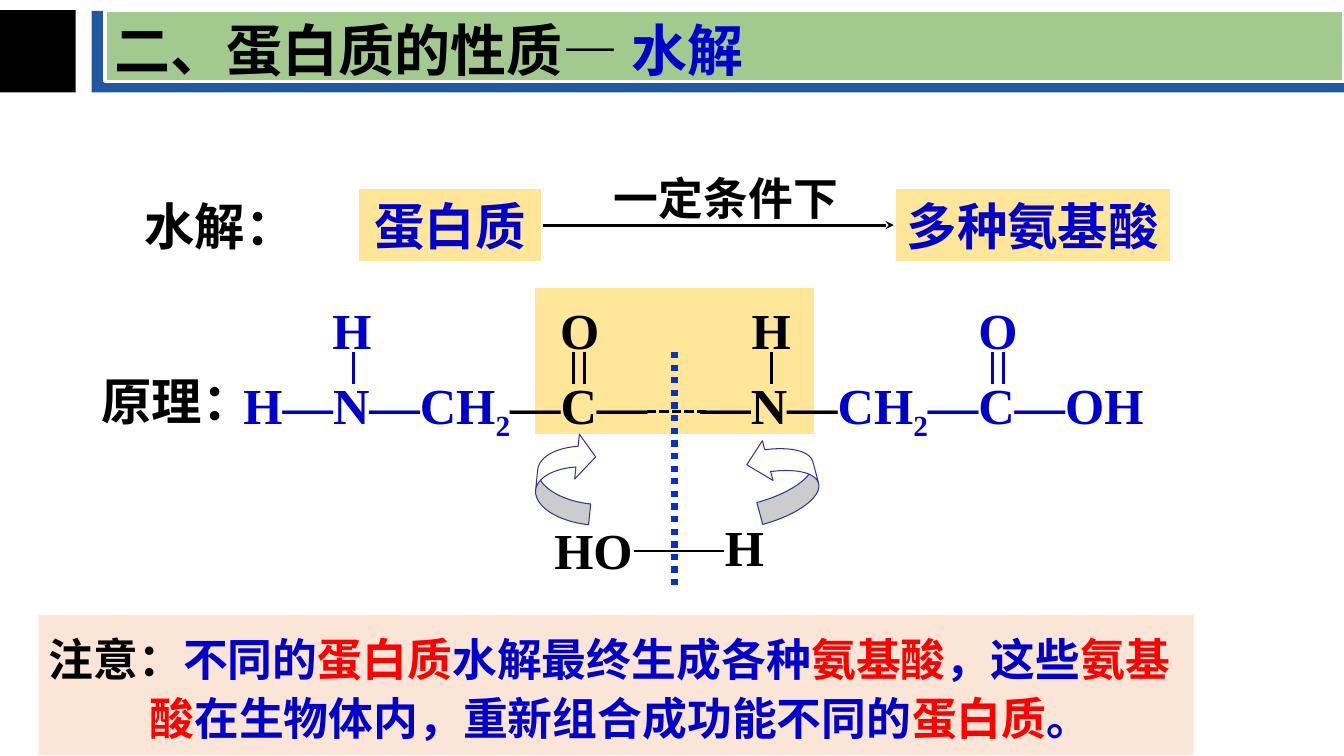
import pptx
import pptx.dml.color
import pptx.enum.dml
import pptx.enum.shapes
import pptx.enum.text
import pptx.oxml.ns
import pptx.util
from lxml import etree

RGBColor = pptx.dml.color.RGBColor
MSO_SHAPE = pptx.enum.shapes.MSO_SHAPE
DASH = pptx.enum.dml.MSO_LINE
ALIGN = pptx.enum.text.PP_ALIGN
ANCHOR = pptx.enum.text.MSO_ANCHOR

BLACK = RGBColor(0x00, 0x00, 0x00)
WHITE = RGBColor(0xFF, 0xFF, 0xFF)
BLUE = RGBColor(0x00, 0x00, 0xCC)
RED = RGBColor(0xFF, 0x00, 0x00)
YELLOW = RGBColor(0xFF, 0xE6, 0x99)
PEACH = RGBColor(0xFB, 0xE5, 0xD6)
GREEN = RGBColor(0xA9, 0xD1, 0x8E)
BANNER_BLUE = RGBColor(0x22, 0x58, 0xA2)
CUT_BLUE = RGBColor(0x00, 0x33, 0xCC)
ARROW_BLUE = RGBColor(0x33, 0x33, 0x99)

LATIN_FONT = "Times New Roman"
CHINESE_FONT = "Noto Sans CJK SC"

# The slide is a grid of 160 columns and 90 rows
SLIDE_WIDTH = pptx.util.Inches(13.33)
SLIDE_HEIGHT = pptx.util.Inches(7.5)
COLUMN = SLIDE_WIDTH / 160
ROW = SLIDE_HEIGHT / 90

ATOM_ROW = 35
CHAIN_ROW = 43.9
TEXT_ROWS = 8.5
BOND_ROWS = (41.9, 45.7)


def place(left, top, width, height):
    return (round(left * COLUMN), round(top * ROW),
            round(width * COLUMN), round(height * ROW))


def add_block(slide, preset, area, fill=None, line=None, weight=3):
    shape = slide.shapes.add_shape(preset, *place(*area))
    shape.shadow.inherit = False
    if fill is None:
        shape.fill.background()
    else:
        shape.fill.solid()
        shape.fill.fore_color.rgb = fill
    if line is None:
        shape.line.fill.background()
    else:
        shape.line.color.rgb = line
        shape.line.width = pptx.util.Pt(weight)
    return shape


def write_runs(shape, runs, size, wrap=True, align=ALIGN.LEFT,
               anchor=ANCHOR.MIDDLE):
    """Each run is (text, colour) or (text, colour, extra)."""
    frame = shape.text_frame
    frame.word_wrap = wrap
    frame.vertical_anchor = anchor
    paragraph = frame.paragraphs[0]
    paragraph.alignment = align
    for text, colour, *extra in runs:
        run = paragraph.add_run()
        run.text = text
        font_values = {"size": pptx.util.Pt(size), "bold": True,
                       "name": CHINESE_FONT if "chinese" in extra else LATIN_FONT}
        for name, value in font_values.items():
            setattr(run.font, name, value)
        run.font.color.rgb = colour
        properties = run.font._element
        east_asian = etree.SubElement(properties, pptx.oxml.ns.qn("a:ea"))
        east_asian.set("typeface", CHINESE_FONT)
        if "subscript" in extra:
            properties.set("baseline", "-25000")
    return paragraph


def add_label(slide, area, runs, size=36, wrap=True):
    shape = slide.shapes.add_textbox(*place(*area))
    write_runs(shape, runs, size, wrap, anchor=ANCHOR.TOP)


def add_line(slide, start, end, colour=BLACK, weight=2.25, dash=None):
    connector = slide.shapes.add_connector(
        pptx.enum.shapes.MSO_CONNECTOR.STRAIGHT,
        *place(*start, *end))
    connector.line.color.rgb = colour
    connector.line.width = pptx.util.Pt(weight)
    if dash is not None:
        connector.line.dash_style = dash
    etree.SubElement(connector._element.spPr, pptx.oxml.ns.qn("a:effectLst"))
    return connector


def add_bond(slide, columns, colour):
    for column in columns:
        add_line(slide, (column, BOND_ROWS[0]), (column, BOND_ROWS[1]), colour)


def add_curved_arrow(slide, preset, area, rotation, adjustments):
    shape = add_block(slide, preset, area, WHITE, ARROW_BLUE, 0.75)
    shape.rotation = rotation
    for index, value in enumerate(adjustments):
        shape.adjustments[index] = value


def add_banner(slide):
    rectangle = MSO_SHAPE.RECTANGLE
    add_block(slide, rectangle, (0, 1.2, 9, 9.8), BLACK)
    add_block(slide, rectangle, (10.9, 1.3, 149.1, 9.7), BANNER_BLUE)
    band = add_block(slide, rectangle, (12.5, 1.3, 147.5, 8.4), GREEN, WHITE, 2.25)
    colour = band._element.spPr.find(".//" + pptx.oxml.ns.qn("a:srgbClr"))
    etree.SubElement(colour, pptx.oxml.ns.qn("a:alpha")).set("val", "95000")
    add_label(slide, (12.5, 1.2, 84.7, 9.2),
              [("二、蛋白质的性质", BLACK), ("— ", BLACK, "chinese"),
               ("水解", BLUE, "chinese")], 40)


def add_reaction(slide):
    add_label(slide, (16, 22.6, 20.4, TEXT_ROWS), [("水解：", BLACK)], wrap=False)
    boxes = []
    for name, left, width in (("蛋白质", 42.5, 22.1), ("多种氨基酸", 106.4, 33.1)):
        box = add_block(slide, MSO_SHAPE.RECTANGLE, (left, 22.3, width, 9),
                        YELLOW, WHITE)
        write_runs(box, [(name, BLUE)], 36, False, ALIGN.CENTER)
        boxes.append(box)
    arrow = add_line(slide, (64.6, 26.8), (106.4, 26.8), weight=2)
    arrow.begin_connect(boxes[0], 3)
    arrow.end_connect(boxes[1], 1)
    tail = etree.SubElement(arrow.line._get_or_add_ln(), pptx.oxml.ns.qn("a:tailEnd"))
    tail.set("type", "stealth")
    add_label(slide, (71.9, 19.7, 29.2, 7.7), [("一定条件下", BLACK)], 32, False)


def add_mechanism(slide):
    principle = add_block(slide, MSO_SHAPE.RECTANGLE, (10.9, 43.6, 20.4, 8))
    write_runs(principle, [("原理：", BLACK)], 36)

    # Water molecule and the cut through the peptide bond
    add_curved_arrow(slide, MSO_SHAPE.CURVED_RIGHT_ARROW,
                     (89.4, 51.8, 7.7, 9.8), 165, (0.35, 1.04, 0.33))
    add_curved_arrow(slide, MSO_SHAPE.CURVED_DOWN_ARROW,
                     (61.9, 53.4, 10.8, 6.7), 276, (0.37, 0.8, 0.33))
    add_line(slide, (80.3, 41.9), (80.3, 70), CUT_BLUE, 4.5, DASH.ROUND_DOT)
    add_label(slide, (64.8, 61.2, 13, TEXT_ROWS), [("HO", BLACK)])
    add_label(slide, (85.1, 60.8, 9.7, TEXT_ROWS), [("H", BLACK)])
    add_line(slide, (75.5, 65.6), (86.2, 65.6), weight=1.5)

    # Peptide chain
    add_label(slide, (27.8, CHAIN_ROW, 51.2, TEXT_ROWS),
              [("H—N—CH", BLUE), ("2", BLUE, "subscript"), ("—C—", BLACK)],
              wrap=False)
    add_label(slide, (82.2, CHAIN_ROW, 55.9, TEXT_ROWS),
              [("—N—", BLACK), ("CH", BLUE), ("2", BLUE, "subscript"),
               ("—C—OH", BLUE)], wrap=False)
    for atom, left, colour, bonds in (("H", 38.4, BLUE, (42.1,)),
                                      ("O", 65.5, BLACK, (68.3, 69.6)),
                                      ("H", 88.3, BLACK, (91.8,)),
                                      ("O", 115.3, BLUE, (118.2, 119.5))):
        add_label(slide, (left, ATOM_ROW, 9, TEXT_ROWS), [(atom, colour)])
        add_bond(slide, bonds, colour)
    add_line(slide, (77, 49), (84.4, 49), dash=DASH.SQUARE_DOT)


def add_note(slide):
    note = add_block(slide, MSO_SHAPE.RECTANGLE, (4.6, 73.2, 137.5, 16.7), PEACH)
    runs = (("注意：", BLACK), ("不同的", BLUE), ("蛋白质", RED),
            ("水解最终生成各种", BLUE), ("氨基酸", RED), ("，这些", BLUE),
            ("氨基酸", RED), ("在生物体内，重新组合成功能不同的", BLUE),
            ("蛋白质", RED), ("。", BLUE))
    paragraph = write_runs(note, [(*run, "chinese") for run in runs], 32)
    paragraph.line_spacing = 1.1
    hanging = round(12 * COLUMN)
    properties = paragraph._element.get_or_add_pPr()
    properties.set("marL", str(hanging))
    properties.set("indent", str(-hanging))


def main():
    presentation = pptx.Presentation()
    presentation.slide_width = SLIDE_WIDTH
    presentation.slide_height = SLIDE_HEIGHT
    slide = presentation.slides.add_slide(presentation.slide_layouts[6])

    # Peptide bond highlight lies behind everything else
    add_block(slide, MSO_SHAPE.RECTANGLE, (63.5, 34, 33.7, 17.9), YELLOW, WHITE)
    add_banner(slide)
    add_reaction(slide)
    add_mechanism(slide)
    add_note(slide)
    presentation.save("out.pptx")


if __name__ == "__main__":
    main()
